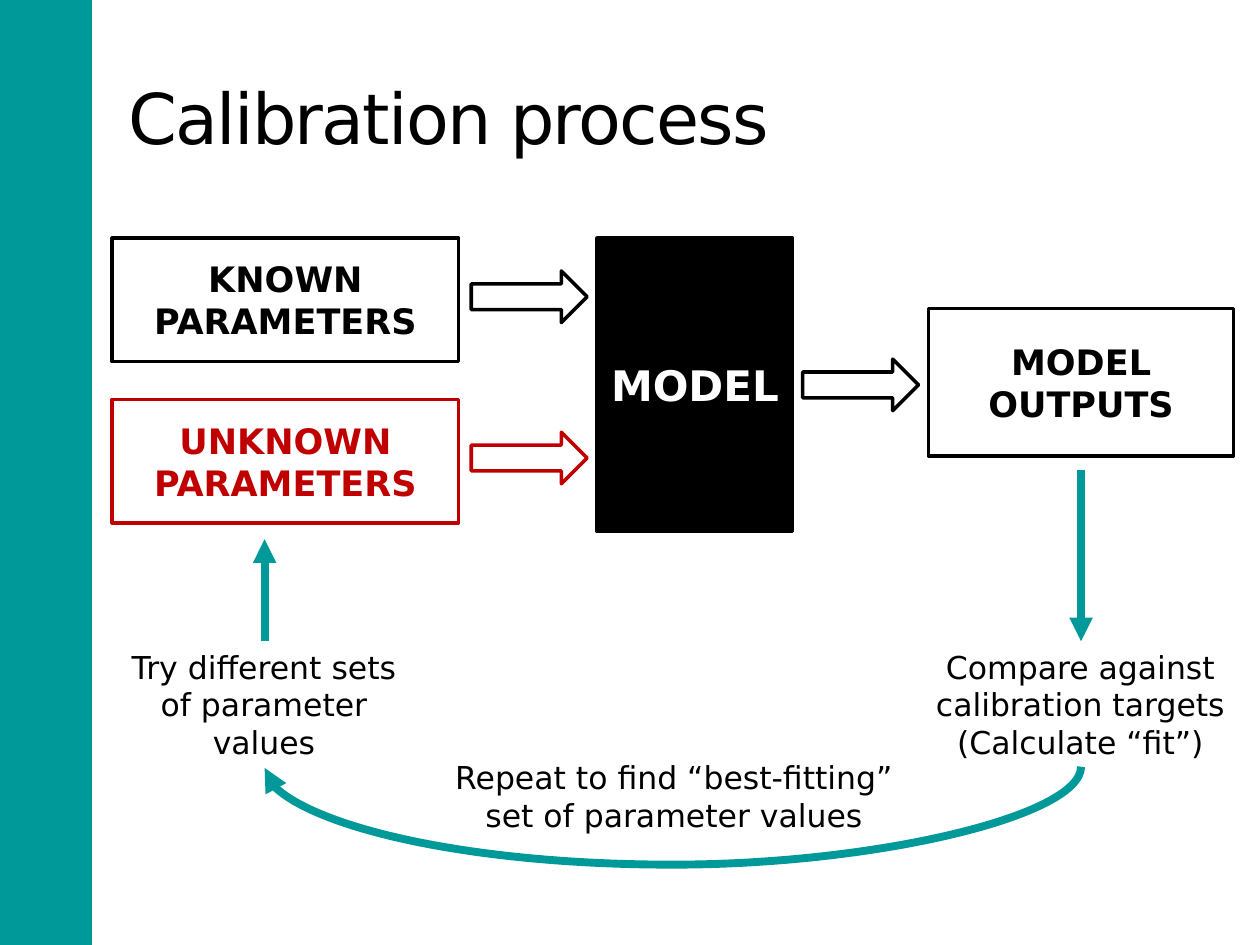
from lxml.etree import SubElement
from pptx import Presentation
from pptx.dml.color import RGBColor
from pptx.enum.shapes import MSO_CONNECTOR, MSO_SHAPE
from pptx.enum.text import MSO_ANCHOR, PP_ALIGN
from pptx.oxml.ns import qn
from pptx.util import Inches, Pt

COLORS = {"teal": "009999", "black": "000000", "white": "FFFFFF", "red": "C00000"}
FONT = "DejaVu Sans"
WIDTH, HEIGHT = 10, 7.5
ARROW_SIZE = (0.92, 0.41)


def color(name):
    return RGBColor.from_string(COLORS[name])


def write(shape, lines, size, ink="black", bold=False, align=PP_ALIGN.CENTER,
          anchor=MSO_ANCHOR.MIDDLE):
    frame = shape.text_frame
    frame.word_wrap = True
    frame.vertical_anchor = anchor
    for index, line in enumerate(lines):
        paragraph = frame.paragraphs[0] if index == 0 else frame.add_paragraph()
        paragraph.alignment = align
        run = paragraph.add_run()
        run.text = line
        run.font.color.rgb = color(ink)
        for name, value in {"name": FONT, "size": Pt(size), "bold": bold}.items():
            setattr(run.font, name, value)


def add_block(slide, kind, box, fill="white", outline=None):
    shape = slide.shapes.add_shape(kind, *map(Inches, box))
    shape.shadow.inherit = False
    shape.fill.solid()
    shape.fill.fore_color.rgb = color(fill)
    if outline:
        shape.line.color.rgb = color(outline)
        shape.line.width = Pt(2)
    else:
        shape.line.fill.background()
    return shape


def add_flow(slide, kind, start, end):
    """Teal line with a triangular head at its end."""
    connector = slide.shapes.add_connector(kind, *map(Inches, (*start, *end)))
    connector.line.color.rgb = color("teal")
    connector.line.width = Pt(4.5)
    properties = connector._element.spPr
    SubElement(properties.find(qn("a:ln")), qn("a:tailEnd"), type="triangle")
    SubElement(properties, qn("a:effectLst"))
    return connector


def add_return_curve(slide, center, span, depth):
    """Curve that hangs below two ends on about the same level."""
    drop = 0.01
    x, y = center
    connector = add_flow(slide, MSO_CONNECTOR.CURVE,
                         (x - drop / 2, y - span / 2), (x + drop / 2, y + span / 2))
    properties = connector._element.spPr
    properties.find(qn("a:xfrm")).set("rot", str(90 * 60000))
    adjustments = properties.find(qn("a:prstGeom")).get_or_add_avLst()
    SubElement(adjustments, qn("a:gd"), name="adj1",
               fmla=f"val {round(depth / drop * 100000)}")


def add_caption(slide, box, lines):
    shape = slide.shapes.add_textbox(*map(Inches, box))
    write(shape, lines, 18, anchor=MSO_ANCHOR.TOP)


def add_heading(slide, box, text):
    title = slide.shapes.title
    title.left, title.top, title.width, title.height = map(Inches, box)
    write(title, [text], 40, align=PP_ALIGN.LEFT)
    title.text_frame.paragraphs[0].runs[0]._r.get_or_add_rPr().set("spc", "-100")


def add_model_row(slide, left, top):
    """Inputs, model and outputs, joined by block arrows."""
    boxes = [
        # text, offset and size, fill, outline and ink, text size
        ("MODEL", (3.85, 0, 1.55, 2.33), "black", "black", "white", 24),
        ("MODEL OUTPUTS", (6.48, 0.56, 2.42, 1.17), "white", "black", "black", 20),
        ("KNOWN PARAMETERS", (0, 0, 2.75, 0.98), "white", "black", "black", 20),
        ("UNKNOWN PARAMETERS", (0, 1.28, 2.75, 0.98), "white", "red", "red", 20),
    ]
    for text, (x, y, width, height), fill, outline, ink, size in boxes:
        shape = add_block(slide, MSO_SHAPE.RECTANGLE,
                          (left + x, top + y, width, height), fill, outline)
        write(shape, [text], size, ink, bold=True)
    for x, y, outline in [(2.85, 0.26, "black"), (2.85, 1.54, "red"), (5.48, 0.96, "black")]:
        add_block(slide, MSO_SHAPE.RIGHT_ARROW,
                  (left + x, top + y, *ARROW_SIZE), outline=outline)


def add_feedback_loop(slide, left, top):
    """Comparison with targets and the way back to the unknown parameters."""
    try_x, compare_x = left + 1.21, left + 7.69
    add_caption(slide, (left + 6.35, top, 2.67, 1.01),
                ["Compare against calibration targets", "(Calculate “fit”)"])
    add_caption(slide, (left, top, 2.41, 1.01), ["Try different sets of parameter values"])
    add_flow(slide, MSO_CONNECTOR.STRAIGHT, (compare_x, top - 1.36), (compare_x, top))
    add_flow(slide, MSO_CONNECTOR.STRAIGHT, (try_x, top), (try_x, top - 0.81))
    add_return_curve(slide, ((try_x + compare_x) / 2, top + 1), compare_x - try_x, 0.79)
    add_caption(slide, (left + 2.56, top + 0.88, 3.8, 0.71),
                ["Repeat to find “best-fitting”", "set of parameter values"])


def main():
    presentation = Presentation()
    presentation.slide_width, presentation.slide_height = Inches(WIDTH), Inches(HEIGHT)
    slide = presentation.slides.add_slide(presentation.slide_layouts[5])
    # Side band
    add_block(slide, MSO_SHAPE.RECTANGLE, (-0.02, 0, 0.75, HEIGHT), "teal")
    add_heading(slide, (0.92, 0.3, 8.33, 1.25), "Calibration process")
    add_model_row(slide, 0.89, 1.89)
    add_feedback_loop(slide, 0.89, 5.09)
    presentation.save("out.pptx")


if __name__ == "__main__":
    main()
